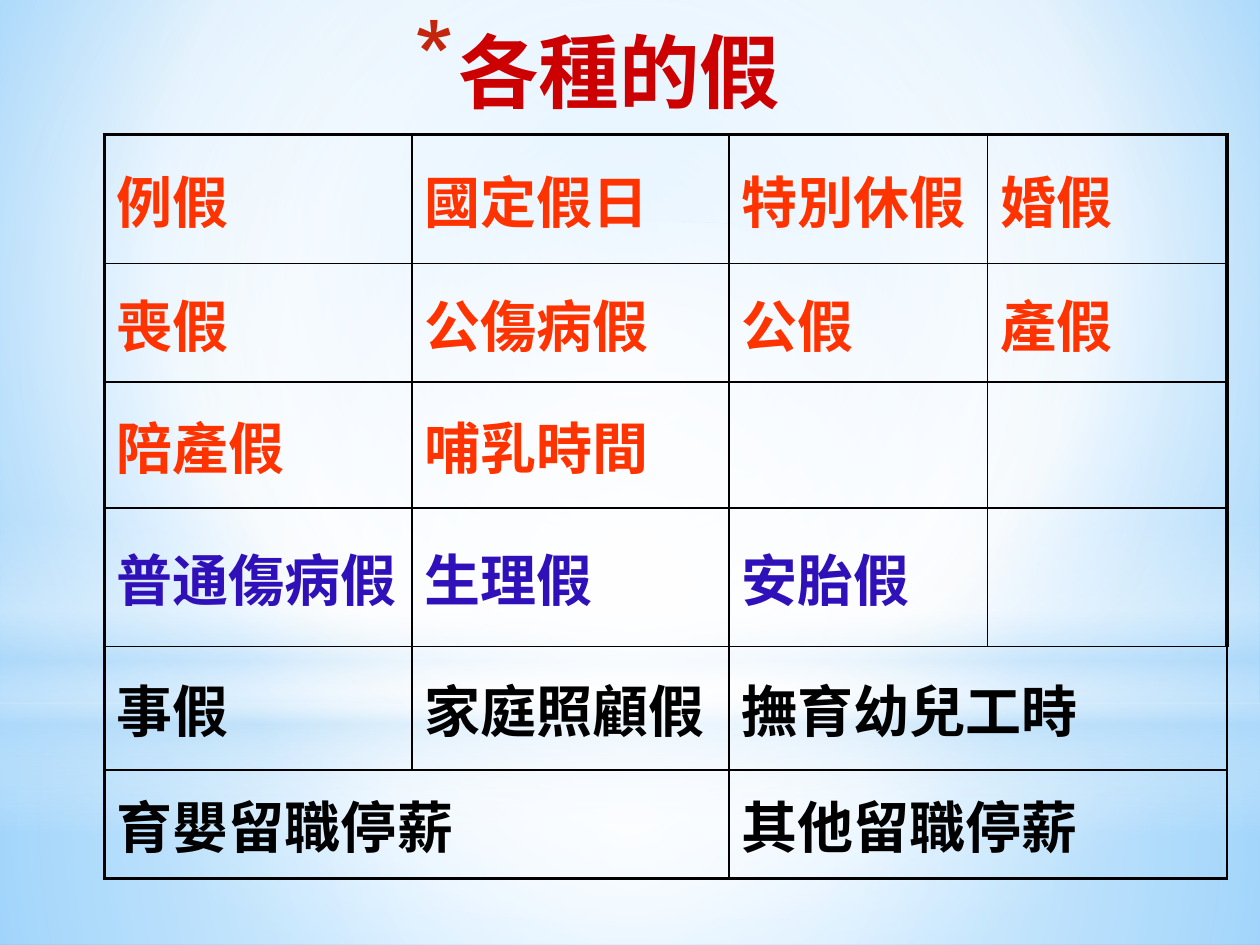
from lxml.etree import SubElement
from pptx import Presentation
from pptx.dml.color import RGBColor
from pptx.enum.shapes import MSO_SHAPE as Shape
from pptx.enum.text import MSO_ANCHOR as Anchor, PP_ALIGN as Align
from pptx.oxml import parse_xml
from pptx.oxml.ns import nsdecls, qn
from pptx.util import Pt

WHITE = RGBColor(0xFF, 0xFF, 0xFF)
BLACK = RGBColor(0, 0, 0)
MIST = RGBColor(0xB4, 0xDC, 0xFA)
SKY = RGBColor(0x9E, 0xD5, 0xFF)
AZURE = RGBColor(0x5B, 0xB9, 0xFF)
CRIMSON = RGBColor(0xCC, 0, 0)
RUST = RGBColor(0xC3, 0x26, 0x0C)
ORANGE = RGBColor(0xFF, 0x33, 0)
VIOLET = RGBColor(0x30, 0x10, 0xB8)

CENTER = (50, 50, 50, 50)
BACKDROP = ([(0, SKY, 100), (60, WHITE, 100), (100, AZURE, 100)], (20, 10, 20, 60))
LAYERS = [
    (Shape.RECTANGLE, 401.76, 138.24,
     [(0, WHITE, 91), (37, WHITE, 76), (100, MIST, 79)], CENTER),
    (Shape.RECTANGLE, 0, 401.76,
     [(0, WHITE, 89), (48, WHITE, 62), (100, MIST, 79)], CENTER),
    (Shape.RECTANGLE, 296.64, 180,
     [(0, WHITE, 0), (29, WHITE, 30), (45, MIST, 40), (55, WHITE, 26),
      (65, MIST, 60), (100, WHITE, 0)], None),
    (Shape.OVAL, 126, 401.76, [(0, WHITE, 100), (56, WHITE, 0)], CENTER),
]

TITLE = "各種的假"
COLUMN_WIDTHS = [175.7, 181.4, 147.6, 136.8]
ROWS = [
    (73.6, ORANGE, ["例假", "國定假日", "特別休假", "婚假"]),
    (67.7, ORANGE, ["喪假", "公傷病假", "公假", "產假"]),
    (72, ORANGE, ["陪產假", "哺乳時間", "", ""]),
    (79.2, VIOLET, ["普通傷病假", "生理假", "安胎假", ""]),
    (70.6, BLACK, ["事假", "家庭照顧假", "撫育幼兒工時", ""]),
    (61.9, BLACK, ["育嬰留職停薪", "", "其他留職停薪", ""]),
]
MERGES = [(4, 2), (5, 0), (5, 2)]
THIN, THICK = 1, 2.25


def paint_gradient(parent, stops, focus):
    gradient = parse_xml(f'<a:gradFill {nsdecls("a")} rotWithShape="1"/>')
    stop_list = SubElement(gradient, qn("a:gsLst"))
    for position, color, opacity in stops:
        stop = SubElement(stop_list, qn("a:gs"), pos=str(position * 1000))
        tint = SubElement(stop, qn("a:srgbClr"), val=str(color))
        if opacity < 100:
            SubElement(tint, qn("a:alpha"), val=str(opacity * 1000))
    if focus:
        path = SubElement(gradient, qn("a:path"), path="circle")
        sides = {side: str(value * 1000) for side, value in zip("ltrb", focus)}
        SubElement(path, qn("a:fillToRect"), **sides)
    else:
        SubElement(gradient, qn("a:lin"), ang="5400000", scaled="0")
    parent.replace(parent.find(qn("a:noFill")), gradient)


def format_run(paragraph, font_name, size, color):
    for run in paragraph.runs:
        run.font.name = font_name
        run.font.size = Pt(size)
        run.font.bold = True
        run.font.color.rgb = color


def add_backdrop(slide):
    slide.background.fill.background()
    paint_gradient(slide.element.find(".//" + qn("p:bgPr")), *BACKDROP)
    for kind, top, height, stops, focus in LAYERS:
        layer = slide.shapes.add_shape(kind, 0, Pt(top), Pt(720), Pt(height))
        layer.shadow.inherit = False
        layer.line.fill.background()
        layer.fill.background()
        paint_gradient(layer.element.spPr, stops, focus)


def add_title(slide):
    box = slide.shapes.add_textbox(Pt(223.9), Pt(15.1), Pt(229), Pt(45.4))
    box.text_frame.word_wrap = True
    box.text_frame.text = TITLE
    paragraph = box.text_frame.paragraphs[0]
    paragraph.alignment = Align.RIGHT
    paragraph.line_spacing = 0.9
    format_run(paragraph, "Lato", 46, CRIMSON)
    properties = paragraph._p.get_or_add_pPr()
    properties.set("marL", str(Pt(25.2)))
    properties.set("indent", str(-Pt(25.2)))
    bullet_color = SubElement(properties, qn("a:buClr"))
    SubElement(bullet_color, qn("a:srgbClr"), val=str(RUST))
    SubElement(properties, qn("a:buSzPct"), val="128000")
    SubElement(properties, qn("a:buChar"), char="*")


def add_borders(cell, widths):
    properties = cell._tc.get_or_add_tcPr()
    for side, width in zip("LRTB", widths):
        line = SubElement(properties, qn(f"a:ln{side}"), w=str(Pt(width)))
        fill = SubElement(line, qn("a:solidFill"))
        SubElement(fill, qn("a:srgbClr"), val=str(BLACK))


def add_leave_table(slide):
    heights = [height for height, _, _ in ROWS]
    last_row, last_column = len(ROWS) - 1, len(COLUMN_WIDTHS) - 1
    table = slide.shapes.add_table(
        len(ROWS), len(COLUMN_WIDTHS), Pt(59.6), Pt(77),
        Pt(sum(COLUMN_WIDTHS)), Pt(sum(heights))).table
    table.first_row = table.horz_banding = False
    for column, width in zip(table.columns, COLUMN_WIDTHS):
        column.width = Pt(width)
    for i, (height, color, names) in enumerate(ROWS):
        table.rows[i].height = Pt(height)
        for j, name in enumerate(names):
            cell = table.cell(i, j)
            edges = (j == 0, j == last_column, i == 0, i == last_row)
            add_borders(cell, [THICK if edge else THIN for edge in edges])
            cell.fill.background()
            cell.vertical_anchor = Anchor.MIDDLE
            if name:
                cell.text_frame.text = name
                paragraph = cell.text_frame.paragraphs[0]
                paragraph.space_before = Pt(6.4)
                format_run(paragraph, "DejaVu Sans", 32, color)
    for i, j in MERGES:
        table.cell(i, j).merge(table.cell(i, j + 1))


def main():
    presentation = Presentation()
    presentation.slide_width, presentation.slide_height = Pt(720), Pt(540)
    slide = presentation.slides.add_slide(presentation.slide_layouts[6])
    add_backdrop(slide)
    add_title(slide)
    add_leave_table(slide)
    presentation.save("out.pptx")


if __name__ == "__main__":
    main()
